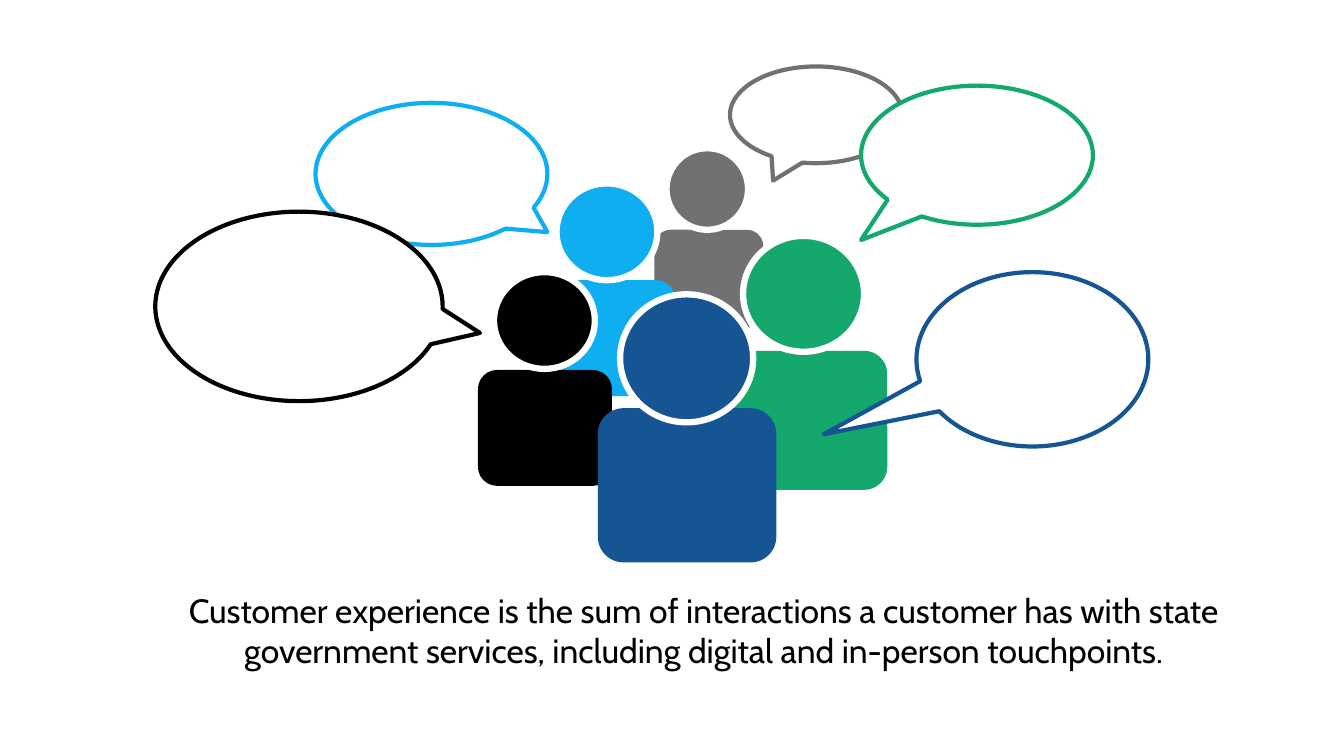
from pptx import Presentation
from pptx.dml.color import RGBColor
from pptx.enum.shapes import MSO_SHAPE
from pptx.enum.text import MSO_AUTO_SIZE, PP_ALIGN
from pptx.util import Emu, Pt

BUBBLE = MSO_SHAPE.OVAL_CALLOUT
BODY = MSO_SHAPE.ROUNDED_RECTANGLE
HEAD = MSO_SHAPE.OVAL
CENTER = PP_ALIGN.CENTER
GROW = MSO_AUTO_SIZE.SHAPE_TO_FIT_TEXT

PX = 9144  # 100 px to the inch
WHITE, BLACK, GRAY = "FFFFFF", "000000", "717171"
SKY, GREEN, NAVY = "0EAEF0", "14A86C", "165594"


def px(*lengths):
    return [Emu(n * PX) for n in lengths]


def rgb(color):
    return RGBColor.from_string(color)


def write(tf, text, size=24, font="Cabin", color=BLACK, align=CENTER):
    p = tf.paragraphs[0]
    p.alignment = align
    r = p.add_run()
    r.text = text
    r.font.size = Pt(size)
    r.font.name = font
    r.font.color.rgb = rgb(color)


class Slide:
    outline = 3
    head_outline = 4.5

    def __init__(self, prs):
        self.s = prs.slides.add_slide(prs.slide_layouts[6])

    def shape(self, shapes, kind, box, fill, line=None, width=0):
        sp = shapes.add_shape(kind, *px(*box))
        sp.shadow.inherit = False
        sp.fill.solid()
        sp.fill.fore_color.rgb = rgb(fill)
        if line:
            sp.line.color.rgb = rgb(line)
            sp.line.width = Pt(width)
        else:
            sp.line.fill.background()
        return sp

    def bubble(self, color, box, tail):
        sp = self.shape(self.s.shapes, BUBBLE, box, WHITE, color, self.outline)
        for i, offset in enumerate(tail):
            sp.adjustments[i] = offset

    def crowd(self, people):
        group = self.s.shapes.add_group_shape()
        for color, body, head in people:
            self.shape(group.shapes, BODY, body, color)
            self.shape(group.shapes, HEAD, head, color, WHITE, self.head_outline)

    def caption(self, box, text):
        tf = self.s.shapes.add_textbox(*px(*box)).text_frame
        tf.word_wrap = True
        tf.auto_size = GROW
        write(tf, text)


# Each person: colour, body, head, from back to front
PEOPLE = [
    (GRAY, (649, 228, 108, 97), (661, 147, 81, 81)),
    (GREEN, (719, 348, 161, 138), (737, 234, 120, 115)),
    (SKY, (537, 278, 133, 115), (552, 182, 100, 96)),
    (BLACK, (474, 367, 133, 115), (490, 270, 100, 96)),
    (NAVY, (593, 405, 177, 153), (615, 292, 132, 127)),
]

# Each bubble: colour, box, tail tip as a share of the box from its centre
FRONT_BUBBLES = [
    (NAVY, (909, 270, 230, 173), (-0.9, 0.43)),
    (BLACK, (154, 210, 285, 188), (0.63, 0.14)),
    (GRAY, (724, 66, 171, 96), (-0.25, 0.68)),
    (GREEN, (854, 85, 230, 138), (-0.5, 0.61)),
]


def main():
    prs = Presentation()
    prs.slide_width, prs.slide_height = px(1333, 750)
    slide = Slide(prs)

    # Bubble behind the crowd
    slide.bubble(SKY, (313, 102, 230, 141), (0.5, 0.41))

    # Customers
    slide.crowd(PEOPLE)

    # Bubbles in front of the crowd
    for bubble in FRONT_BUBBLES:
        slide.bubble(*bubble)

    # Definition
    slide.caption(
        (166, 580, 1064, 91),
        "Customer experience is the sum of interactions a customer has with state "
        "government services, including digital and in-person touchpoints.",
    )

    prs.save("out.pptx")


if __name__ == "__main__":
    main()
